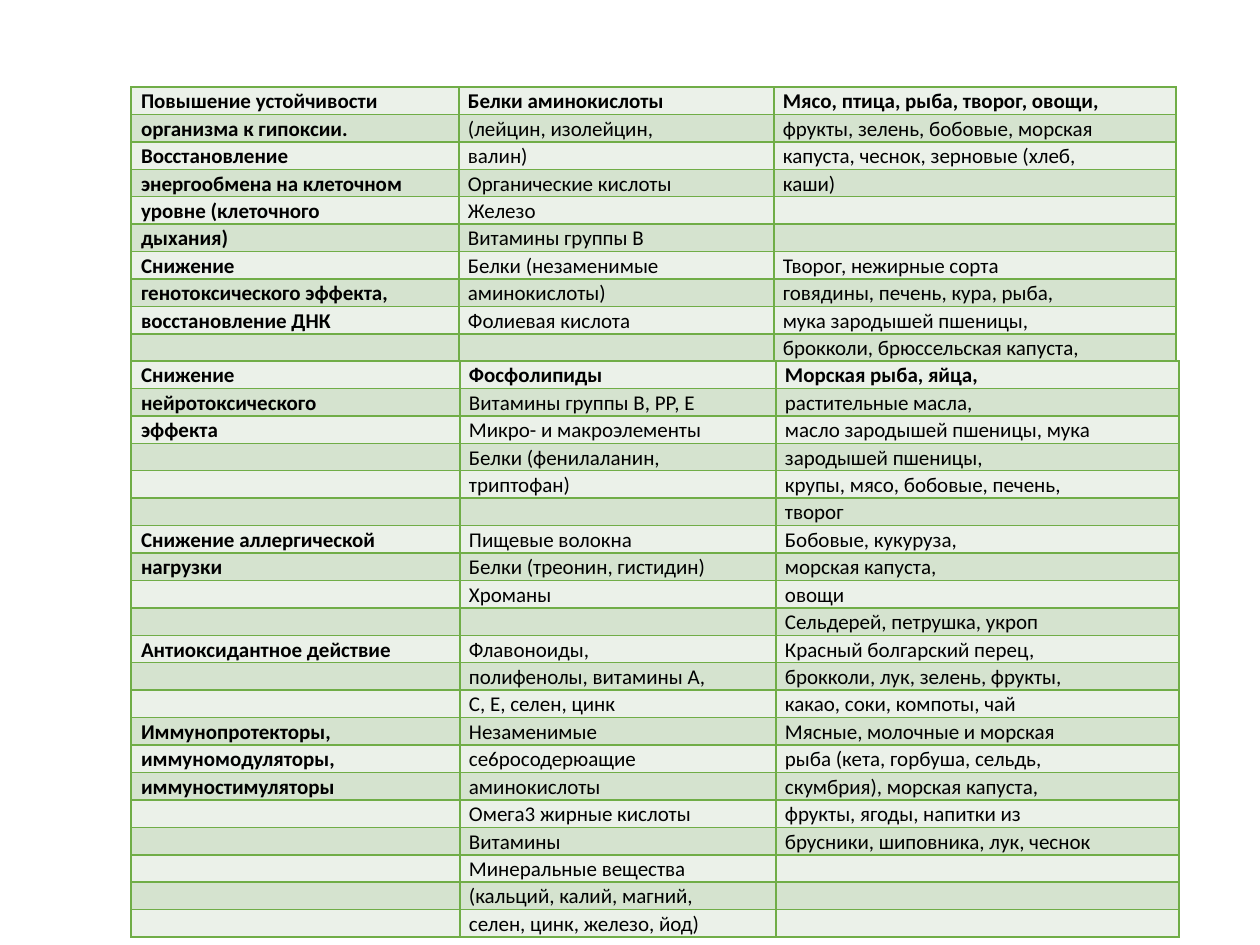
from dataclasses import dataclass

from lxml.etree import SubElement
from pptx import Presentation
from pptx.dml.color import RGBColor
from pptx.enum.text import MSO_VERTICAL_ANCHOR as Anchor
from pptx.oxml.ns import qn
from pptx.util import Pt

PX = 914400 // 126  # EMU in one px
COLORS = {"light": "EBF1E9", "band": "D5E3CF", "border": "70AD47", "text": "000000"}
FONT, FONT_SIZE, LINE_SPACING = "Calibri", 12, 1.07
ROW_HEIGHT = 27
INDENTS = (10, 9, 9)  # left indent of each column


@dataclass
class NutritionTable:
    left: int
    top: int
    widths: tuple[int, ...]
    rows: list[tuple[str, str, str]]


# Effect, nutrients, foods
TABLES = [
    NutritionTable(131, 87, (328, 315, 402), [
        ("Повышение устойчивости", "Белки аминокислоты", "Мясо, птица, рыба, творог, овощи,"),
        ("организма к гипоксии.", "(лейцин, изолейцин,", "фрукты, зелень, бобовые, морская"),
        ("Восстановление", "валин)", "капуста, чеснок, зерновые (хлеб,"),
        ("энергообмена на клеточном", "Органические кислоты", "каши)"),
        ("уровне (клеточного", "Железо", ""),
        ("дыхания)", "Витамины группы В", ""),
        ("Снижение", "Белки (незаменимые", "Творог, нежирные сорта"),
        ("генотоксического эффекта,", "аминокислоты)", "говядины, печень, кура, рыба,"),
        ("восстановление ДНК", "Фолиевая кислота", "мука зародышей пшеницы,"),
        ("", "", "брокколи, брюссельская капуста,"),
    ]),
    NutritionTable(131, 361, (329, 316, 403), [
        ("Снижение", "Фосфолипиды", "Морская рыба, яйца,"),
        ("нейротоксического", "Витамины группы В, РР, Е", "растительные масла,"),
        ("эффекта", "Микро- и макроэлементы", "масло зародышей пшеницы, мука"),
        ("", "Белки (фенилаланин,", "зародышей пшеницы,"),
        ("", "триптофан)", "крупы, мясо, бобовые, печень,"),
        ("", "", "творог"),
        ("Снижение аллергической", "Пищевые волокна", "Бобовые, кукуруза,"),
        ("нагрузки", "Белки (треонин, гистидин)", "морская капуста,"),
        ("", "Хроманы", "овощи"),
        ("", "", "Сельдерей, петрушка, укроп"),
        ("Антиоксидантное действие", "Флавоноиды,", "Красный болгарский перец,"),
        ("", "полифенолы, витамины А,", "брокколи, лук, зелень, фрукты,"),
        ("", "С, Е, селен, цинк", "какао, соки, компоты, чай"),
        ("Иммунопротекторы,", "Незаменимые", "Мясные, молочные и морская"),
        ("иммуномодуляторы,", "се6росодерюащие", "рыба (кета, горбуша, сельдь,"),
        ("иммуностимуляторы", "аминокислоты", "скумбрия), морская капуста,"),
        ("", "Омега3 жирные кислоты", "фрукты, ягоды, напитки из"),
        ("", "Витамины", "брусники, шиповника, лук, чеснок"),
        ("", "Минеральные вещества", ""),
        ("", "(кальций, калий, магний,", ""),
        ("", "селен, цинк, железо, йод)", ""),
    ]),
]


def color(name: str) -> RGBColor:
    return RGBColor.from_string(COLORS[name])


def add_borders(cell) -> None:
    """Border lines come before the fill in the cell properties."""
    properties = cell._tc.get_or_add_tcPr()
    for position, side in enumerate(("lnL", "lnR", "lnT", "lnB")):
        line = SubElement(properties, qn(f"a:{side}"), w=str(Pt(1)))
        fill = SubElement(line, qn("a:solidFill"))
        SubElement(fill, qn("a:srgbClr"), val=COLORS["border"])
        properties.insert(position, line)


def write_text(cell, text: str, indent: int, bold: bool) -> None:
    para = cell.text_frame.paragraphs[0]
    para.line_spacing = LINE_SPACING
    para._p.get_or_add_pPr().set("marL", str(indent * PX))
    if not text:
        # Keeps an empty cell as low as a filled one
        SubElement(para._p, qn("a:endParaRPr"), sz=str(FONT_SIZE * 100))
        return
    span = para.add_run()
    span.text = text
    span.font.name = FONT
    span.font.size = Pt(FONT_SIZE)
    span.font.bold = bold
    span.font.color.rgb = color("text")


def draw_table(page, data: NutritionTable) -> None:
    frame = page.shapes.add_table(
        len(data.rows), len(data.widths), data.left * PX, data.top * PX,
        sum(data.widths) * PX, len(data.rows) * ROW_HEIGHT * PX)
    table = frame.table
    table.first_row = table.horz_banding = False
    for column, width in zip(table.columns, data.widths):
        column.width = width * PX
    for row_index, texts in enumerate(data.rows):
        table.rows[row_index].height = ROW_HEIGHT * PX
        for column_index, text in enumerate(texts):
            cell = table.cell(row_index, column_index)
            cell.margin_left = cell.margin_right = 0
            cell.margin_top = cell.margin_bottom = 0
            cell.vertical_anchor = Anchor.BOTTOM
            cell.fill.solid()
            cell.fill.fore_color.rgb = color("band" if row_index % 2 else "light")
            add_borders(cell)
            write_text(cell, text, INDENTS[column_index],
                       bold=row_index == 0 or column_index == 0)


def main() -> None:
    deck = Presentation()
    deck.slide_width, deck.slide_height = 1260 * PX, 945 * PX
    page = deck.slides.add_slide(deck.slide_layouts[6])
    for data in TABLES:
        draw_table(page, data)
    deck.save("out.pptx")


if __name__ == "__main__":
    main()
